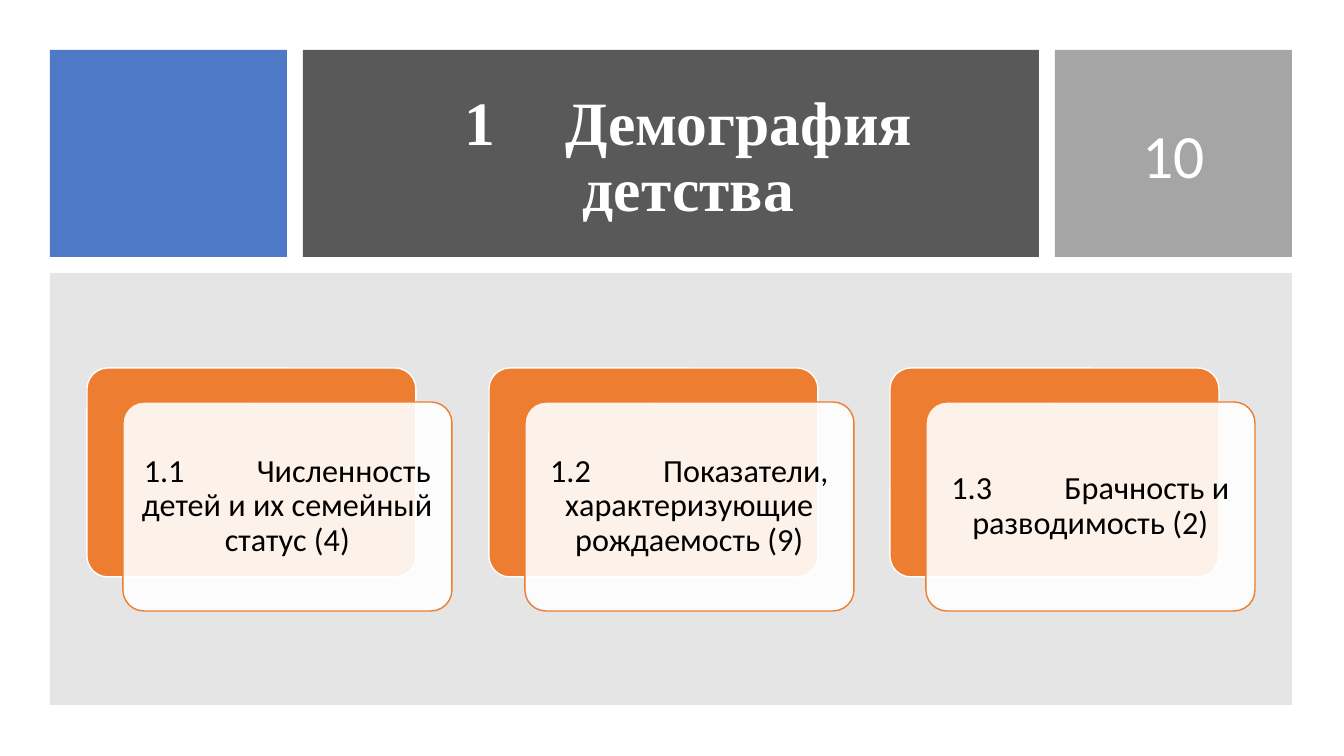
from dataclasses import dataclass
from typing import Optional

from lxml.etree import SubElement
from pptx import Presentation
from pptx.dml.color import RGBColor
from pptx.enum.shapes import MSO_SHAPE as Kind
from pptx.enum.text import MSO_ANCHOR as Anchor, PP_ALIGN as Align
from pptx.oxml.ns import qn
from pptx.util import Emu, Pt

SCALE = 914400 / 100.8
WHITE, BLACK, ORANGE = "FFFFFF", "000000", "ED7D31"


@dataclass(frozen=True)
class Label:
    text: str
    size: int
    font: str = "Calibri"
    color: str = WHITE
    bold: bool = False
    ratio: float = 1.0
    tab: int = 101
    indent: int = 0


@dataclass(frozen=True)
class Block:
    x: int
    y: int
    w: int
    h: int
    fill: str
    alpha: int = 100
    line: Optional[str] = None
    label: Optional[Label] = None
    round: bool = False


def px(n: int) -> Emu:
    return Emu(round(n * SCALE))


def paint(target, color: str, alpha: int = 100) -> None:
    target.solid()
    target.fore_color.rgb = RGBColor.from_string(color)
    if alpha < 100:
        node = target._xPr.find(".//" + qn("a:srgbClr"))
        SubElement(node, qn("a:alpha")).set("val", str(alpha * 1000))


def write(frame, label: Label) -> None:
    side = px(10)
    form = {"word_wrap": True, "vertical_anchor": Anchor.MIDDLE,
            "margin_left": side, "margin_right": side,
            "margin_top": side, "margin_bottom": side}
    for name, value in form.items():
        setattr(frame, name, value)
    para = frame.paragraphs[0]
    para.alignment, para.line_spacing = Align.CENTER, label.ratio
    # Left indent and tab width
    for name, value in {"marL": label.indent, "defTabSz": label.tab}.items():
        para._p.get_or_add_pPr().set(name, str(px(value)))
    run = para.add_run()
    run.text = label.text
    look = {"size": Pt(label.size), "name": label.font, "bold": label.bold}
    for name, value in look.items():
        setattr(run.font, name, value)
    run.font.color.rgb = RGBColor.from_string(label.color)


def draw(shapes, block: Block) -> None:
    kind = Kind.ROUNDED_RECTANGLE if block.round else Kind.RECTANGLE
    shape = shapes.add_shape(kind, *map(px, (block.x, block.y, block.w, block.h)))
    shape.shadow.inherit = False
    if block.round:
        shape.adjustments[0] = 0.1
    paint(shape.fill, block.fill, block.alpha)
    if block.line:
        paint(shape.line.fill, block.line)
        shape.line.width = Pt(1)
    else:
        shape.line.fill.background()
    if block.label:
        write(shape.text_frame, block.label)


# Header band and panel
TOP, HIGH, SIDE = 50, 207, 237
BASE = [
    Block(50, TOP, SIDE, HIGH, "4472C4", alpha=95),
    Block(303, TOP, 736, HIGH, "595959"),
    Block(1055, TOP, SIDE, HIGH, "A5A5A5", label=Label("10", 44)),
    Block(50, 273, 1242, 432, "808080", alpha=20),
]
TITLE = Label("1\tДемография детства", 44, "Times New Roman",
              bold=True, ratio=0.9, indent=34)

# Topic cards
LEFT, ROW, WIDE, TALL, PITCH = 87, 368, 329, 209, 401.6
SHIFT_X, SHIFT_Y = 36, 34
TOPICS = [
    "1.1\tЧисленность детей и их семейный статус (4)",
    "1.2\tПоказатели, характеризующие рождаемость (9)",
    "1.3\tБрачность и разводимость (2)",
]


def main() -> None:
    deck = Presentation()
    deck.slide_width, deck.slide_height = px(1344), px(756)
    shapes = deck.slides.add_slide(deck.slide_layouts[6]).shapes

    for block in BASE:
        draw(shapes, block)

    # Title text
    box = shapes.add_textbox(*map(px, (336, 80, 671, 157)))
    write(box.text_frame, TITLE)

    # Each card is an orange back and a pale front
    for i, topic in enumerate(TOPICS):
        x = LEFT + round(i * PITCH)
        draw(shapes, Block(x, ROW, WIDE, TALL, ORANGE, line=WHITE, round=True))
        label = Label(topic, 23, color=BLACK, ratio=0.9, tab=113)
        draw(shapes, Block(x + SHIFT_X, ROW + SHIFT_Y, WIDE, TALL, WHITE,
                           alpha=90, line=ORANGE, label=label, round=True))

    deck.save("out.pptx")


if __name__ == "__main__":
    main()
